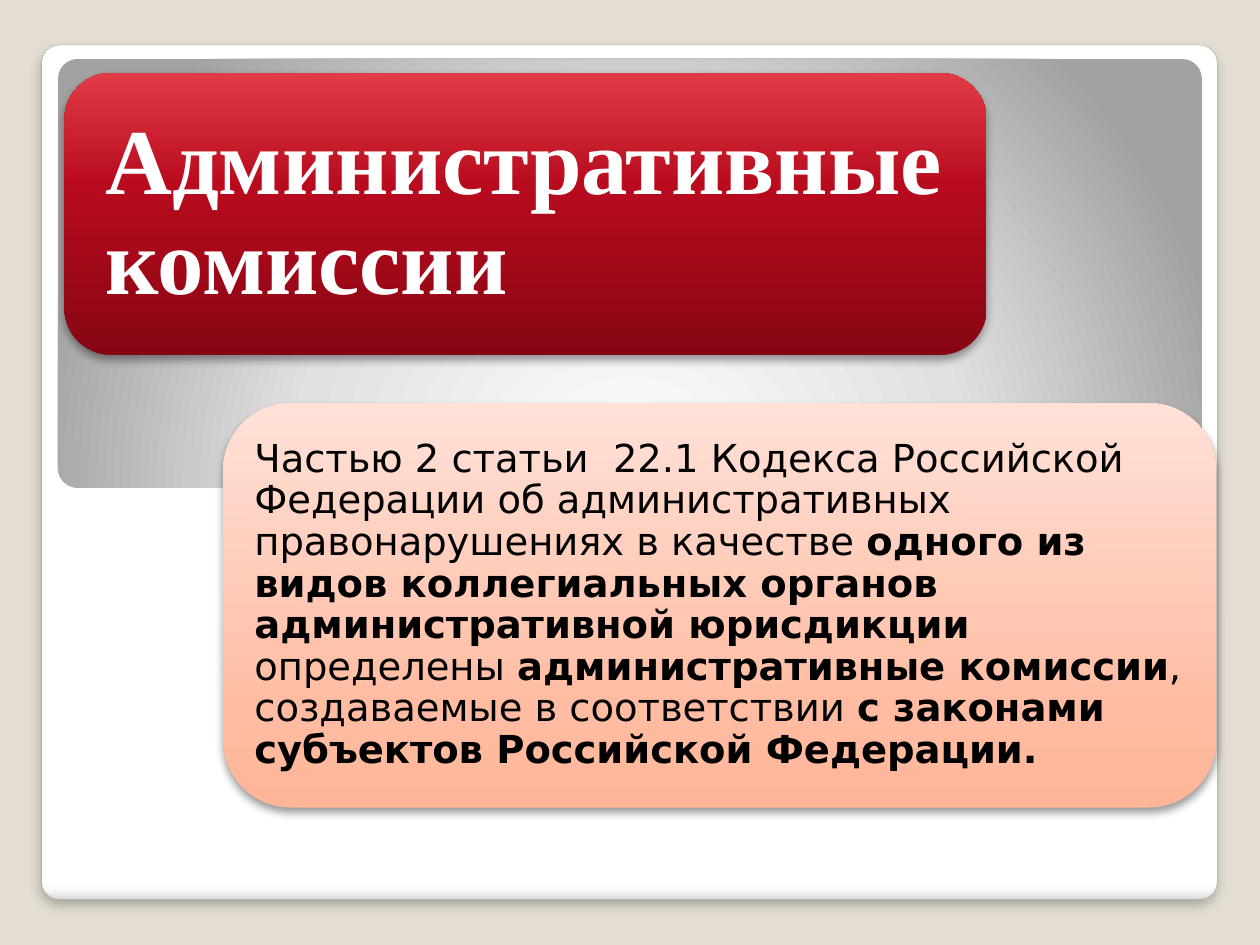
from dataclasses import dataclass
from typing import Optional

from lxml.etree import SubElement as Sub
from pptx import Presentation
from pptx.dml.color import RGBColor as Rgb
from pptx.enum.shapes import MSO_SHAPE as Kind
from pptx.enum.text import MSO_ANCHOR as Anchor, MSO_AUTO_SIZE as Fit, PP_ALIGN as Align
from pptx.oxml.ns import qn
from pptx.util import Cm, Pt

HUES = {
    "back": "E3DED1", "edge": "A4A4A4", "white": "FFFFFF", "black": "000000",
    "pale": "F7F7F7", "ash": "DADADA", "silver": "E1E1E1", "gray": "A2A2A2",
    "wine": "870614", "red": "B80B1E", "rose": "E13C45",
    "peach": "FFB598", "coral": "FFBCA2", "blush": "FFE1D8",
}


@dataclass
class Box:
    left: float
    top: float
    width: float
    height: float

    def place(self) -> list:
        return [Cm(v) for v in (self.left, self.top, self.width, self.height)]

    def inner(self, gap: float) -> "Box":
        return Box(self.left + gap, self.top + gap,
                   self.width - 2 * gap, self.height - 2 * gap)


@dataclass
class Shade:
    alpha: int
    blur: float
    dist: float


@dataclass
class Panel:
    box: Box
    stops: list
    angle: Optional[int] = None  # None means a round gradient
    round: float = 0.1667
    shade: Optional[Shade] = None
    edge: Optional[str] = None


@dataclass
class Style:
    font: str
    size: int
    hue: str
    inset: float


def paint(shape, panel: Panel) -> None:
    """Fill the shape with the panel's gradient stops."""
    shape.fill.gradient()
    grad = shape.element.spPr.find(qn("a:gradFill"))
    for child in list(grad):
        grad.remove(child)
    row = Sub(grad, qn("a:gsLst"))
    for pos, hue in panel.stops:
        stop = Sub(row, qn("a:gs"), pos=str(pos * 1000))
        Sub(stop, qn("a:srgbClr"), val=HUES[hue])
    if panel.angle is None:
        way = Sub(grad, qn("a:path"), path="circle")
        Sub(way, qn("a:fillToRect"), l="50000", t="175000", r="50000", b="-75000")
    else:
        Sub(grad, qn("a:lin"), ang=str(panel.angle * 60000), scaled="0")


def cast(shape, shade: Shade) -> None:
    """Drop a soft black shadow straight down."""
    fx = shape.element.spPr.find(qn("a:effectLst"))
    drop = Sub(fx, qn("a:outerShdw"), blurRad=str(Pt(shade.blur)),
               dist=str(Pt(shade.dist)), dir="5400000", algn="t", rotWithShape="0")
    tone = Sub(drop, qn("a:srgbClr"), val=HUES["black"])
    Sub(tone, qn("a:alpha"), val=str(shade.alpha * 1000))


def draw(slide, panel: Panel) -> None:
    shape = slide.shapes.add_shape(Kind.ROUNDED_RECTANGLE, *panel.box.place())
    shape.adjustments[0] = panel.round
    paint(shape, panel)
    if panel.edge:
        shape.line.color.rgb = Rgb.from_string(HUES[panel.edge])
        shape.line.width = Pt(0.16)
    else:
        shape.line.fill.background()
    shape.shadow.inherit = False
    if panel.shade:
        cast(shape, panel.shade)


def write(shape, box: Box, style: Style, runs: list) -> None:
    shape.left, shape.top, shape.width, shape.height = box.place()
    frame = shape.text_frame
    frame.word_wrap = True
    frame.auto_size = Fit.NONE
    frame.vertical_anchor = Anchor.MIDDLE
    frame.margin_left = frame.margin_right = Cm(style.inset)
    frame.margin_top = frame.margin_bottom = Cm(style.inset)
    para = frame.paragraphs[0]
    para.alignment = Align.LEFT
    para.line_spacing = 0.9
    for text, bold in runs:
        run = para.add_run()
        run.text = text
        run.font.name = style.font
        run.font.size = Pt(style.size)
        run.font.bold = bold
        run.font.color.rgb = Rgb.from_string(HUES[style.hue])


# Panels, from back to front
DEEP = Shade(40, 5.2, 3)
HEAD = Box(1.3, 1.47, 18.59, 5.69)
BODY = Box(4.5, 8.13, 20.02, 8.15)
PANELS = [
    Panel(Box(0.84, 0.91, 23.7, 17.22),
          [(0, "white"), (98, "white"), (99, "pale"), (100, "ash")],
          90, 0.021, Shade(25, 6, 4), "edge"),
    Panel(Box(1.17, 1.19, 23.06, 8.64),
          [(0, "white"), (55, "silver"), (100, "gray")], round=0.046),
    Panel(HEAD, [(0, "wine"), (60, "red"), (100, "rose")], 270, shade=DEEP),
    Panel(BODY, [(0, "peach"), (25, "coral"), (100, "blush")], 270, shade=DEEP),
]

# Wording, as (text, bold)
TITLE = [("Административные комиссии", True)]
TEXT = [
    ("Частью 2 статьи  22.1 Кодекса Российской Федерации об "
     "административных правонарушениях в качестве ", False),
    ("одного из видов коллегиальных органов административной юрисдикции", True),
    (" определены ", False),
    ("административные комиссии", True),
    (", создаваемые в соответствии ", False),
    ("с законами субъектов Российской Федерации.", True),
]


def main() -> None:
    deck = Presentation()
    deck.slide_width, deck.slide_height = Cm(25.4), Cm(19.05)
    slide = deck.slides.add_slide(deck.slide_layouts[5])
    slide.background.fill.solid()
    slide.background.fill.fore_color.rgb = Rgb.from_string(HUES["back"])

    for panel in PANELS:
        draw(slide, panel)

    # The title goes in front of the panels
    title = slide.shapes.title
    title.element.getparent().append(title.element)
    write(title, HEAD.inner(0.27), Style("Times New Roman", 53, "white", 0.55), TITLE)

    box = BODY.inner(0.4)
    note = slide.shapes.add_textbox(*box.place())
    write(note, box, Style("DejaVu Sans", 22, "black", 0.23), TEXT)
    deck.save("out.pptx")


if __name__ == "__main__":
    main()
